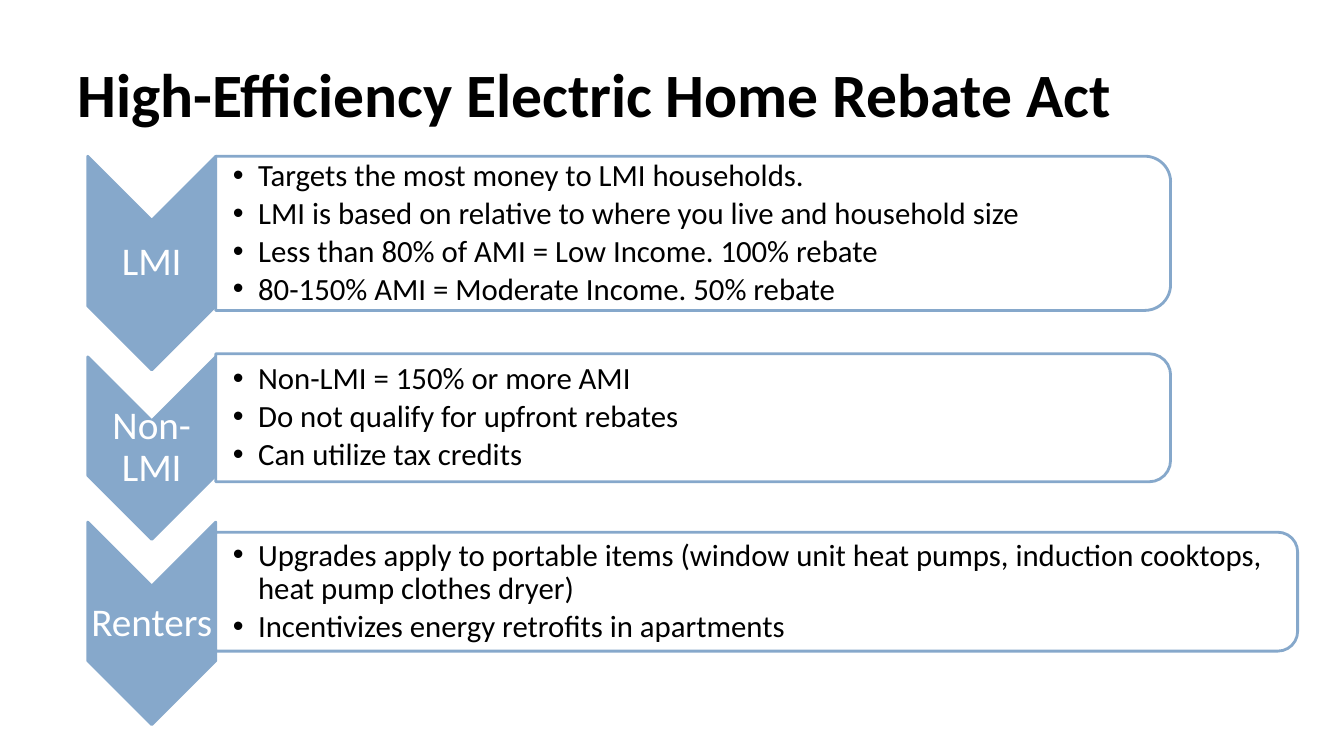
from dataclasses import dataclass

from lxml.etree import SubElement
from pptx import Presentation
from pptx.dml.color import RGBColor
from pptx.enum.shapes import MSO_SHAPE as Preset
from pptx.enum.text import MSO_ANCHOR as Anchor, PP_ALIGN as Align
from pptx.oxml.ns import qn
from pptx.util import Inches, Pt


@dataclass(frozen=True)
class Theme:
    font: str = "Calibri"
    accent: RGBColor = RGBColor(0x86, 0xA8, 0xCB)
    dark: RGBColor = RGBColor(0, 0, 0)
    light: RGBColor = RGBColor(255, 255, 255)
    title_size: int = 44
    label_size: int = 28
    body_size: int = 22


THEME = Theme()
CHEVRON_LEFT = 0.87
CHEVRON_WIDTH = 1.27
PANEL_LEFT = CHEVRON_LEFT + CHEVRON_WIDTH

SECTIONS = [
    {
        "label": "LMI",
        "chevron": (1.55, 2.12),
        "panel": (1.55, 9.47, 1.53),
        "points": [
            "Targets the most money to LMI households.",
            "LMI is based on relative to where you live and household size",
            "Less than 80% of AMI = Low Income. 100% rebate",
            "80-150% AMI = Moderate Income. 50% rebate",
        ],
    },
    {
        "label": "Non-LMI",
        "chevron": (3.54, 1.81),
        "panel": (3.51, 9.47, 1.27),
        "points": [
            "Non-LMI = 150% or more AMI",
            "Do not qualify for upfront rebates",
            "Can utilize tax credits",
        ],
    },
    {
        "label": "Renters",
        "chevron": (5.18, 2.01),
        "panel": (5.28, 10.73, 1.18),
        "points": [
            "Upgrades apply to portable items (window unit heat pumps, "
            "induction cooktops, heat pump clothes dryer)",
            "Incentivizes energy retrofits in apartments",
        ],
    },
]


def add_bullet(paragraph):
    properties = paragraph._p.get_or_add_pPr()
    properties.set("marL", str(Inches(0.25)))
    properties.set("indent", str(-Inches(0.25)))
    SubElement(properties, qn("a:buFont"), typeface="Arial")
    SubElement(properties, qn("a:buChar"), char="•")


def add_text(slide, lines, left, top, width, height, *, size, color,
             bold=False, align=Align.LEFT, margin=0.02, left_margin=None,
             line_spacing=0.9, space_before=0, bullets=False):
    shape = slide.shapes.add_textbox(
        Inches(left), Inches(top), Inches(width), Inches(height))
    frame = shape.text_frame
    frame.word_wrap = True
    frame.vertical_anchor = Anchor.MIDDLE
    frame.margin_left = Inches(margin if left_margin is None else left_margin)
    frame.margin_right = frame.margin_top = frame.margin_bottom = Inches(margin)
    for index, line in enumerate(lines):
        paragraph = frame.add_paragraph() if index else frame.paragraphs[0]
        if bullets:
            add_bullet(paragraph)
        paragraph.alignment = align
        paragraph.line_spacing = line_spacing
        if index:
            paragraph.space_before = Pt(space_before)
        run = paragraph.add_run()
        run.text = line
        run.font.name = THEME.font
        run.font.size = Pt(size)
        run.font.bold = bold
        run.font.color.rgb = color


def add_turned_shape(slide, preset, left, top, width, height, fill, adjustments):
    shape = slide.shapes.add_shape(
        preset,
        Inches(left + (width - height) / 2), Inches(top + (height - width) / 2),
        Inches(height), Inches(width))
    shape.rotation = 90
    shape.shadow.inherit = False
    for index, value in enumerate(adjustments):
        shape.adjustments[index] = value
    shape.fill.solid()
    shape.fill.fore_color.rgb = fill
    shape.line.color.rgb = THEME.accent
    shape.line.width = Pt(2)
    return shape


def add_chevron(slide, label, top, height):
    add_turned_shape(slide, Preset.CHEVRON, CHEVRON_LEFT, top, CHEVRON_WIDTH,
                     height, THEME.accent, [0.5])
    add_text(slide, [label], CHEVRON_LEFT, top + CHEVRON_WIDTH / 2,
             CHEVRON_WIDTH, height - CHEVRON_WIDTH, size=THEME.label_size,
             color=THEME.light, align=Align.CENTER)


def add_panel(slide, points, top, width, height):
    panel = add_turned_shape(slide, Preset.ROUND_2_SAME_RECTANGLE, PANEL_LEFT,
                             top, width, height, THEME.light, [0.167, 0])
    color = panel._element.spPr.find(qn("a:solidFill"))[0]
    SubElement(color, qn("a:alpha"), val="90000")
    inset = height * 0.05
    add_text(slide, points, PANEL_LEFT, top + inset, width - inset,
             height - 2 * inset, size=THEME.body_size, color=THEME.dark,
             left_margin=0.17, space_before=3.3, bullets=True)


def main():
    presentation = Presentation()
    presentation.slide_width = Inches(13.33)
    presentation.slide_height = Inches(7.5)
    slide = presentation.slides.add_slide(presentation.slide_layouts[6])
    add_text(slide, ["High-Efficiency Electric Home Rebate Act"],
             0.67, 0.3, 12, 1.25, size=THEME.title_size, color=THEME.dark,
             bold=True, margin=0.1, line_spacing=1.0)
    for section in SECTIONS:
        add_chevron(slide, section["label"], *section["chevron"])
        add_panel(slide, section["points"], *section["panel"])
    presentation.save("out.pptx")


if __name__ == "__main__":
    main()
